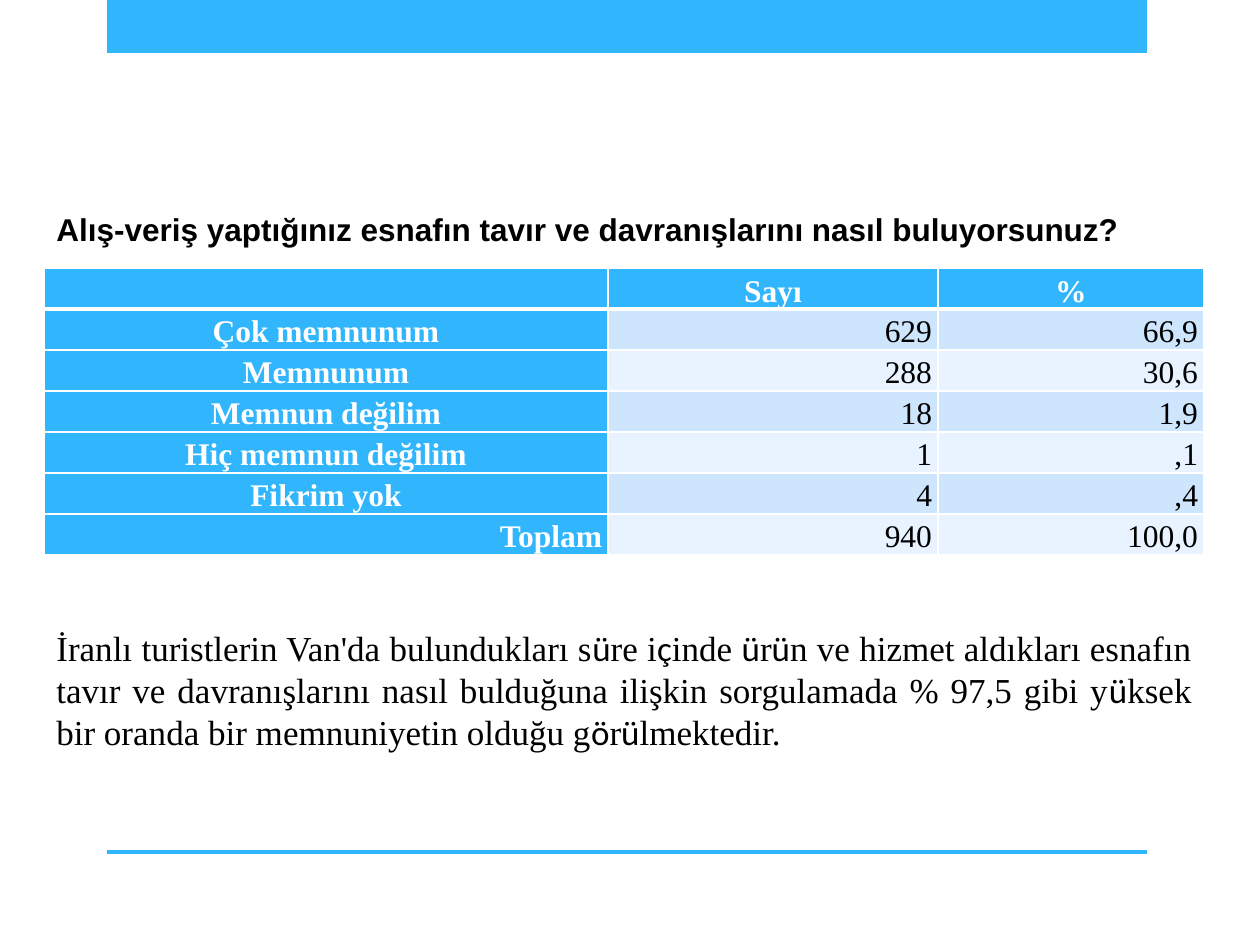
from itertools import groupby
from lxml.etree import SubElement
from pptx import Presentation
from pptx.dml.color import RGBColor
from pptx.enum.shapes import MSO_SHAPE as Shape
from pptx.enum.text import MSO_ANCHOR as Anchor, MSO_AUTO_SIZE as AutoSize, PP_ALIGN as Align
from pptx.oxml.ns import qn
from pptx.util import Emu, Pt

PX = 914400 / 126
BLUE, WHITE, BLACK = "31B6FD", "FFFFFF", "000000"
BANDS = ["CEE5FE", "E8F3FF"]
SERIF = "Times New Roman"


def box(*lengths):
    return [Emu(round(length * PX)) for length in lengths]


def add_run(paragraph, text, color, **formats):
    run = paragraph.add_run()
    run.text = text
    run.font.color.rgb = RGBColor.from_string(color)
    for name, value in formats.items():
        setattr(run.font, name, value)


presentation = Presentation()
presentation.slide_width, presentation.slide_height = box(1260, 945)
slide = presentation.slides.add_slide(presentation.slide_layouts[6])

for top, height in [(0, 53), (850, 4)]:
    bar = slide.shapes.add_shape(Shape.RECTANGLE, *box(107, top, 1040, height))
    bar.shadow.inherit = False
    bar.fill.solid()
    bar.fill.fore_color.rgb = RGBColor.from_string(BLUE)
    bar.line.fill.background()

rows = [
    ("", "Sayı", "%"),
    ("Çok memnunum", "629", "66,9"),
    ("Memnunum", "288", "30,6"),
    ("Memnun değilim", "18", "1,9"),
    ("Hiç memnun değilim", "1", ",1"),
    ("Fikrim yok", "4", ",4"),
    ("Toplam", "940", "100,0"),
]
frame = slide.shapes.add_table(len(rows), 3, *box(44, 268, 1160, 287))
table = frame.table
for column, width in zip(table.columns, box(564, 330, 266)):
    column.width = width

for r, values in enumerate(rows):
    for c, value in enumerate(values):
        cell = table.cell(r, c)
        heading = r == 0 or c == 0
        margin, none = box(6, 0)
        cell_format = {
            "margin_left": margin,
            "margin_right": margin,
            "margin_top": none,
            "margin_bottom": none,
            "vertical_anchor": Anchor.BOTTOM if r == 0 else Anchor.TOP,
        }
        for name, setting in cell_format.items():
            setattr(cell, name, setting)
        for side, edge in enumerate(["lnL", "lnR", "lnT", "lnB"]):
            thick = (r, edge) in [(0, "lnB"), (1, "lnT")]
            properties = cell._tc.get_or_add_tcPr()
            border = SubElement(properties, qn(f"a:{edge}"), w=str(Pt(3 if thick else 1)))
            fill = SubElement(border, qn("a:solidFill"))
            SubElement(fill, qn("a:srgbClr"), val=WHITE)
        cell.fill.solid()
        cell.fill.fore_color.rgb = RGBColor.from_string(BLUE if heading else BANDS[(r - 1) % 2])
        paragraph = cell.text_frame.paragraphs[0]
        paragraph.alignment = Align.CENTER if heading and value != "Toplam" else Align.RIGHT
        paragraph.line_spacing = 1.15
        if value:
            add_run(paragraph, value, WHITE if heading else BLACK,
                    name=SERIF, size=Pt(18), bold=heading)

finding = (
    "İranlı turistlerin Van'da bulundukları süre içinde ürün ve hizmet aldıkları esnafın "
    "tavır ve davranışlarını nasıl bulduğuna ilişkin sorgulamada % 97,5 gibi yüksek "
    "bir oranda bir memnuniyetin olduğu görülmektedir."
)
finding_runs = [
    ("".join(letters), "Calibri" if accented else SERIF)
    for accented, letters in groupby(finding, lambda letter: letter in "üçö")
]
question = "Alış-veriş yaptığınız esnafın tavır ve davranışlarını nasıl buluyorsunuz?"
texts = [
    ((44, 620, 1160, 140), Anchor.MIDDLE, finding_runs, 20, False),
    ((44, 204, 1181, 51), Anchor.TOP, [(question, "Arial")], 18, True),
]
for place, anchor, runs, size, bold in texts:
    text_frame = slide.shapes.add_textbox(*box(*place)).text_frame
    frame_format = {
        "word_wrap": True,
        "auto_size": AutoSize.SHAPE_TO_FIT_TEXT,
        "vertical_anchor": anchor,
    }
    for name, setting in frame_format.items():
        setattr(text_frame, name, setting)
    paragraph = text_frame.paragraphs[0]
    paragraph.alignment = Align.JUSTIFY
    for text, font in runs:
        add_run(paragraph, text, BLACK, name=font, size=Pt(size), bold=bold)

presentation.save("out.pptx")
